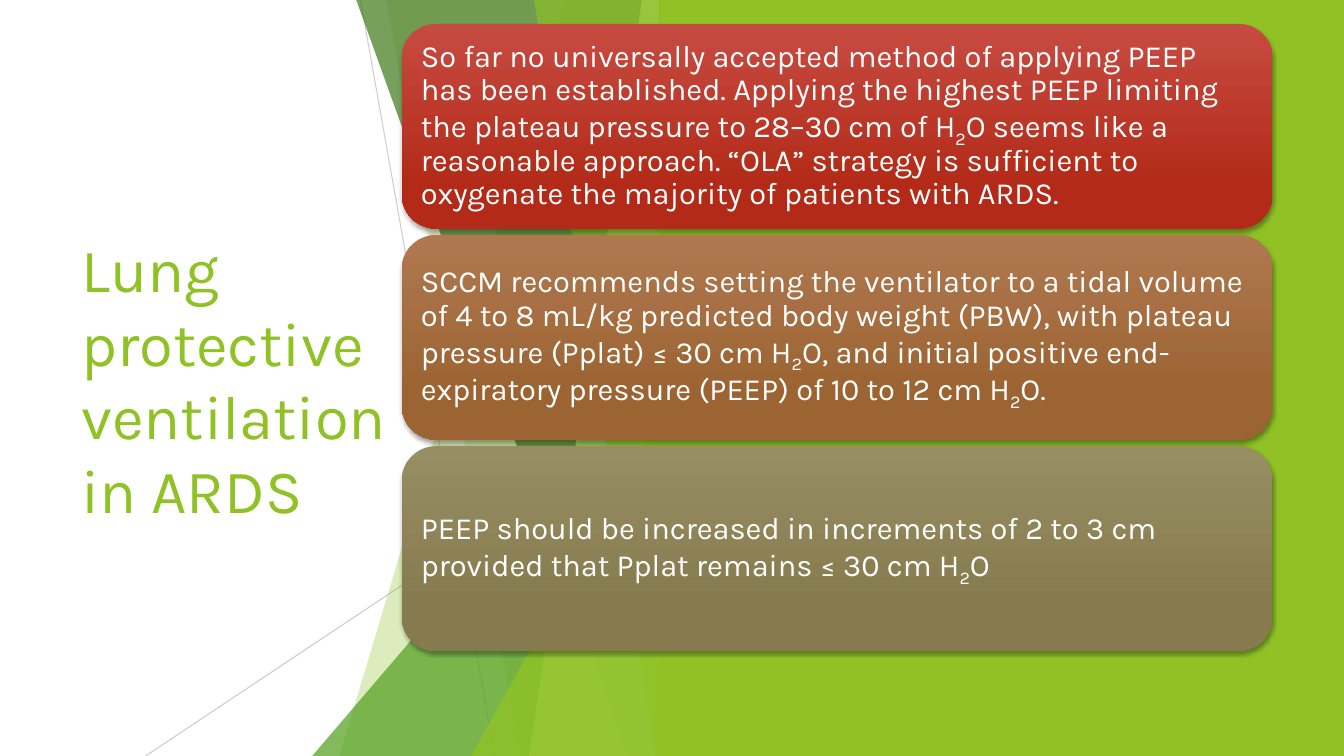
from lxml import etree
from pptx import Presentation
from pptx.dml.color import RGBColor
from pptx.enum.shapes import MSO_CONNECTOR, MSO_SHAPE
from pptx.enum.text import MSO_ANCHOR, PP_ALIGN
from pptx.oxml.ns import qn
from pptx.util import Pt

RECT = MSO_SHAPE.RECTANGLE
ROUND = MSO_SHAPE.ROUNDED_RECTANGLE
TRIANGLE = MSO_SHAPE.ISOSCELES_TRIANGLE
STRAIGHT = MSO_CONNECTOR.STRAIGHT
MIDDLE = MSO_ANCHOR.MIDDLE
LEFT = PP_ALIGN.LEFT

FONT = "Karla"
GREEN = "90C226"
WHITE = "FFFFFF"
GREY = "BFBFBF"

TITLE = "Lung protective ventilation in ARDS"
RAYS = [(34.5, 0, 130.5, 540, 75), (256.5, 290, -119, 540, 80)]
FACETS = [
    ("band", 181, 19.5, GREEN, 30),
    ("band", 53, 148.5, GREEN, 20),
    ("triangle", 0, 240, "54A021", 72),
    ("band", 31.5, 226, "3F7819", 70),
    ("band", 235.5, 155, "C0E474", 70),
    ("band", 158.5, 245.5, GREEN, 65),
    ("triangle", 113.5, 283, GREEN, 80),
]
CARDS = [
    ("So far no universally accepted method of applying PEEP has been established. "
     "Applying the highest PEEP limiting the plateau pressure to 28–30 cm of H~2~O "
     "seems like a reasonable approach. “OLA” strategy is sufficient to oxygenate "
     "the majority of patients with ARDS.", "C74B42", "B32B18"),
    ("SCCM recommends setting the ventilator to a tidal volume of 4 to 8 mL/kg "
     "predicted body weight (PBW), with plateau pressure (Pplat) ≤ 30 cm H~2~O, "
     "and initial positive end-expiratory pressure (PEEP) of 10 to 12 cm H~2~O.",
     "AF784F", "9C6432"),
    ("PEEP should be increased in increments of 2 to 3 cm provided that Pplat "
     "remains ≤ 30 cm H~2~O", "988E64", "857B4E"),
]


def rgb(color):
    return RGBColor.from_string(color)


def set_alpha(parent, percent):
    clr = parent.find(".//" + qn("a:srgbClr"))
    etree.SubElement(clr, qn("a:alpha")).set("val", str(percent * 1000))


def paint(sp, color, alpha=100):
    sp.shadow.inherit = False
    sp.line.fill.background()
    sp.fill.solid()
    sp.fill.fore_color.rgb = rgb(color)
    if alpha < 100:
        set_alpha(sp.fill._xPr.find(qn("a:solidFill")), alpha)


def write(tf, text, size, color, spacing=1.0, inset=7.2):
    tf.word_wrap = True
    tf.vertical_anchor = MIDDLE
    tf.margin_left = tf.margin_right = Pt(inset)
    tf.margin_top = tf.margin_bottom = Pt(inset)
    p = tf.paragraphs[0]
    p.alignment = LEFT
    p.line_spacing = spacing
    for i, part in enumerate(text.split("~")):
        r = p.add_run()
        r.text = part
        r.font.name = FONT
        r.font.size = Pt(size)
        r.font.color.rgb = rgb(color)
        if i % 2:
            r.font._element.set("baseline", "-25000")


def add_title(s, x, y, w, h):
    sp = s.shapes.add_textbox(Pt(x), Pt(y), Pt(w), Pt(h))
    write(sp.text_frame, TITLE, 44, GREEN)


def add_ray(s, x1, y1, x2, y2, alpha):
    ray = s.shapes.add_connector(STRAIGHT, Pt(x1), Pt(y1), Pt(x2), Pt(y2))
    ray.line.width = Pt(0.75)
    ray.line.color.rgb = rgb(GREY)
    props = ray._element.spPr
    set_alpha(props, alpha)
    etree.SubElement(props, qn("a:effectLst"))


def add_facets(s, x, y, w, h):
    for x1, y1, x2, y2, alpha in RAYS:
        add_ray(s, x + x1, y + y1, x + x2, y + y2, alpha)
    right, bottom = x + w, y + h
    for kind, a, b, color, alpha in FACETS:
        if kind == "band":
            fb = s.shapes.build_freeform(Pt(x + a), Pt(y))
            corners = [(right, y), (right, bottom), (x + b, bottom)]
            fb.add_line_segments([(Pt(cx), Pt(cy)) for cx, cy in corners])
            sp = fb.convert_to_shape()
        else:
            sp = s.shapes.add_shape(TRIANGLE, Pt(x + a), Pt(y + b), Pt(w - a), Pt(h - b))
            sp.adjustments[0] = 1
        paint(sp, color, alpha)


def add_panel(s, x, y, w, h):
    sp = s.shapes.add_shape(RECT, Pt(x), Pt(y), Pt(w), Pt(h))
    paint(sp, GREEN)


def add_shadow(sp):
    sp.shadow.inherit = False
    effects = sp._element.spPr.find(qn("a:effectLst"))
    shadow = etree.SubElement(effects, qn("a:outerShdw"), blurRad=str(Pt(3)),
                              dist=str(Pt(2)), dir="5400000", rotWithShape="0")
    etree.SubElement(shadow, qn("a:srgbClr"), val="000000")
    set_alpha(shadow, 35)


def add_card(s, x, y, w, h, text, top, bottom):
    sp = s.shapes.add_shape(ROUND, Pt(x), Pt(y), Pt(w), Pt(h))
    sp.line.fill.background()
    sp.fill.gradient()
    sp.fill.gradient_angle = 270
    for stop, color, position in zip(sp.fill.gradient_stops, (top, bottom), (0, 0.78)):
        stop.color.rgb = rgb(color)
        stop.position = position
    add_shadow(sp)
    write(sp.text_frame, text, 22, WHITE, spacing=0.9, inset=6.5)


def add_cards(s, x, y, w, h, gap=4.6):
    card_h = (h - gap * (len(CARDS) - 1)) / len(CARDS)
    for i, card in enumerate(CARDS):
        add_card(s, x, y + i * (card_h + gap), w, card_h, *card)


def main():
    prs = Presentation()
    prs.slide_width, prs.slide_height = Pt(960), Pt(540)
    s = prs.slides.add_slide(prs.slide_layouts[6])
    add_title(s, 51, 109, 279.5, 322.5)
    add_facets(s, 223, 0, 256.5, 540)
    add_panel(s, 470.5, 0, 489.5, 540)
    add_cards(s, 287, 17, 622, 448)
    prs.save("out.pptx")


if __name__ == "__main__":
    main()
